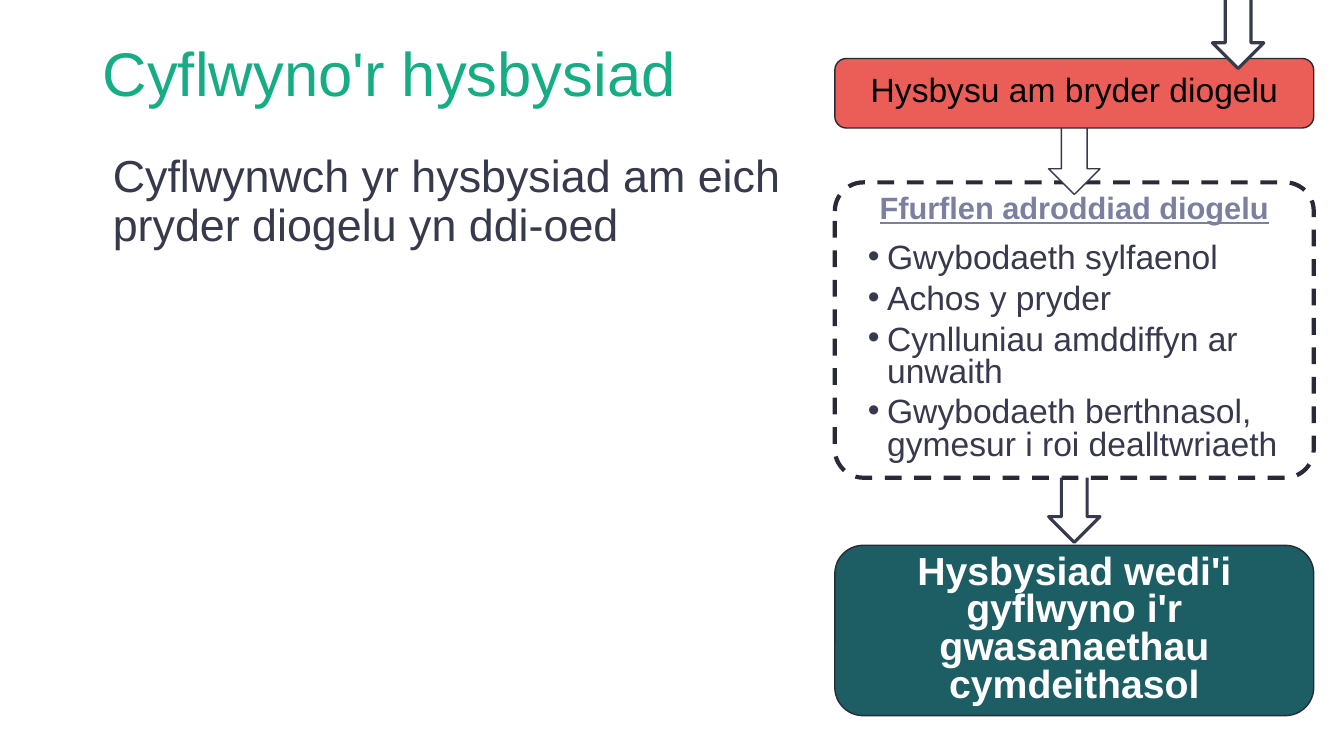
from pptx import Presentation
from pptx.dml.color import RGBColor
from pptx.enum.dml import MSO_LINE
from pptx.enum.shapes import MSO_SHAPE
from pptx.enum.text import MSO_ANCHOR, PP_ALIGN
from pptx.oxml.ns import qn
from pptx.util import Inches, Pt
from lxml import etree

GREEN = RGBColor(0x16, 0xAD, 0x85)
SLATE = RGBColor(0x37, 0x39, 0x4C)
DARK = RGBColor(0x29, 0x2A, 0x38)
TEAL = RGBColor(0x1C, 0x5E, 0x64)
CORAL = RGBColor(0xEB, 0x5E, 0x57)
LAVENDER = RGBColor(0x7B, 0x7F, 0xA0)
WHITE = RGBColor(0xFF, 0xFF, 0xFF)
BLACK = RGBColor(0x00, 0x00, 0x00)

ARROW_W = 0.51
FORM_ITEMS = [
    "Gwybodaeth sylfaenol",
    "Achos y pryder",
    "Cynlluniau amddiffyn ar unwaith",
    "Gwybodaeth berthnasol, gymesur i roi dealltwriaeth",
]


def add_bullet(p, indent=0.19):
    pPr = p._p.get_or_add_pPr()
    pPr.set("marL", str(Inches(indent)))
    pPr.set("indent", str(-Inches(indent)))
    etree.SubElement(pPr, qn("a:buFont")).set("typeface", "Arial")
    etree.SubElement(pPr, qn("a:buChar")).set("char", "•")


def write(shape, lines, color, para, font, anchor=MSO_ANCHOR.MIDDLE, bullets=False):
    """Fill a shape with one paragraph per line; para and font hold format values."""
    tf = shape.text_frame
    tf.word_wrap = True
    tf.vertical_anchor = anchor
    for i, line in enumerate(lines):
        p = tf.add_paragraph() if i else tf.paragraphs[0]
        for name, value in para.items():
            setattr(p, name, value)
        if bullets:
            add_bullet(p)
        r = p.add_run()
        r.text = line
        r.font.name = "Arial"
        r.font.color.rgb = color
        for name, value in font.items():
            setattr(r.font, name, value)


def add_text(slide, box, lines, color, para, font, **options):
    tb = slide.shapes.add_textbox(*map(Inches, box))
    write(tb, lines, color, para, font, **options)


def add_outlined(slide, kind, box, fill, line, width):
    s = slide.shapes.add_shape(kind, *map(Inches, box))
    s.shadow.inherit = False
    s.fill.solid()
    s.fill.fore_color.rgb = fill
    s.line.color.rgb = line
    s.line.width = Pt(width)
    return s


def add_step(slide, box, fill, text, color, font, width=1, after=0, **options):
    s = add_outlined(slide, MSO_SHAPE.ROUNDED_RECTANGLE, box, fill, DARK, width)
    para = dict(alignment=PP_ALIGN.CENTER, line_spacing=0.8, space_after=Pt(after))
    write(s, [text], color, para, font, **options)
    return s


def add_arrow(slide, center, top, height, width=2.25):
    box = (center - ARROW_W / 2, top, ARROW_W, height)
    add_outlined(slide, MSO_SHAPE.DOWN_ARROW, box, WHITE, SLATE, width)


def add_message(slide, x, y, w):
    """Heading with the instruction under it."""
    add_text(slide, (x, y, w, 0.72), ["Cyflwyno'r hysbysiad"], GREEN,
             dict(line_spacing=0.9), dict(size=Pt(44)))
    add_text(slide, (x + 0.1, y + 1.08, w, 4.05),
             ["Cyflwynwch yr hysbysiad am eich pryder diogelu yn ddi-oed"], SLATE,
             dict(line_spacing=0.9, space_after=Pt(6)), dict(size=Pt(32)),
             anchor=MSO_ANCHOR.TOP)


def add_report_flow(slide, x, y, w):
    """Concern, report form and submission, from top to bottom, with arrows."""
    center = x + w / 2
    add_step(slide, (x, y + 4.83, w, 1.69), TEAL,
             "Hysbysiad wedi'i gyflwyno i'r gwasanaethau cymdeithasol", WHITE,
             dict(size=Pt(28), bold=True))
    add_arrow(slide, center, y + 4.11, 0.69)
    form = add_step(slide, (x, y + 1.23, w, 2.93), WHITE,
                    "Ffurflen adroddiad diogelu", LAVENDER,
                    dict(size=Pt(22), bold=True, underline=True),
                    width=3, after=6, anchor=MSO_ANCHOR.TOP)
    form.adjustments[0] = 0.097
    form.line.dash_style = MSO_LINE.DASH
    add_arrow(slide, center, y + 0.55, 0.8, width=1)
    add_step(slide, (x, y, w, 0.69), CORAL, "Hysbysu am bryder diogelu", BLACK,
             dict(size=Pt(24)))
    add_arrow(slide, x + w - 0.75, y - 0.66, 0.76)
    add_text(slide, (x + 0.23, y + 1.78, w - 0.24, 2.29), FORM_ITEMS, SLATE,
             dict(line_spacing=0.8, space_after=Pt(6)), dict(size=Pt(24)),
             bullets=True)


def main():
    prs = Presentation()
    prs.slide_width, prs.slide_height = Inches(13.33), Inches(7.5)
    slide = prs.slides.add_slide(prs.slide_layouts[6])
    add_message(slide, 0.92, 0.4, 6.98)
    add_report_flow(slide, 8.28, 0.58, 4.75)
    prs.save("out.pptx")


if __name__ == "__main__":
    main()
